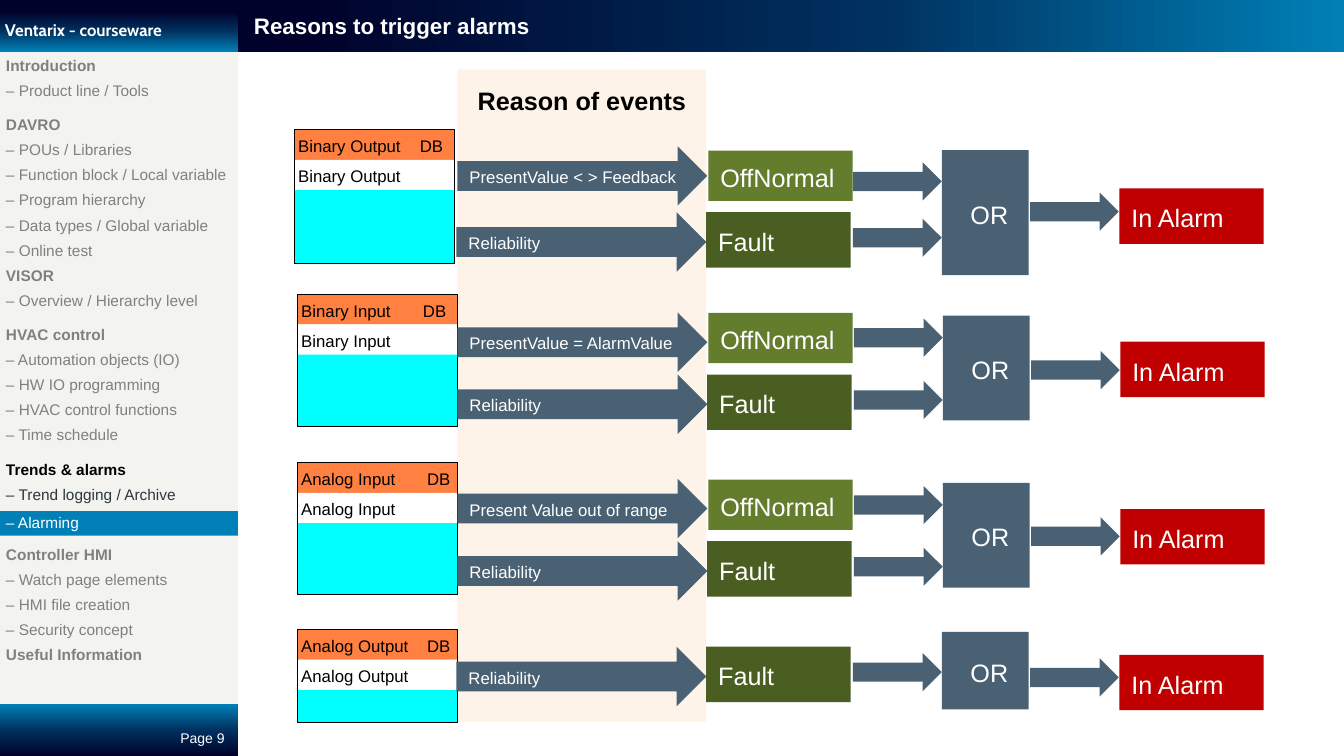
from dataclasses import dataclass
from typing import Optional

from pptx import Presentation
from pptx.dml.color import RGBColor
from pptx.enum.shapes import MSO_SHAPE
from pptx.enum.text import MSO_ANCHOR, PP_ALIGN
from pptx.oxml import parse_xml
from pptx.oxml.ns import nsdecls, qn
from pptx.util import Pt
from lxml.etree import SubElement

WHITE = RGBColor(0xFF, 0xFF, 0xFF)
BLACK = RGBColor(0, 0, 0)
GRAY = RGBColor(0x80, 0x80, 0x80)
DARK_GRAY = RGBColor(0x2D, 0x37, 0x3C)
SIDEBAR = RGBColor(0xF3, 0xF3, 0xF0)
HIGHLIGHT = RGBColor(0x00, 0x80, 0xB6)
NAVY = RGBColor(0x00, 0x02, 0x2B)
MIDNIGHT = RGBColor(0x00, 0x31, 0x5F)
PEACH = RGBColor(0xFD, 0xE4, 0xCC)
ORANGE = RGBColor(0xFF, 0x80, 0x40)
CYAN = RGBColor(0x00, 0xFF, 0xFF)
SLATE = RGBColor(0x49, 0x61, 0x73)
GREEN = RGBColor(0x64, 0x7D, 0x2D)
DARK_GREEN = RGBColor(0x4B, 0x5E, 0x22)
RED = RGBColor(0xC0, 0x00, 0x00)

NO_TABLE_STYLE = "{2D5ABB26-0587-4C30-8999-92F81FD0307C}"
SIDEBAR_WIDTH = 170
HEADER_HEIGHT = 36.9
CELL_HEIGHT = 21.6
BLOCK_INSETS = (8.6, 4.3, 2.9, 4.3)
DATABASE_INSETS = (2.9, 4.3, 2.9, 4.3)
TOPIC_INSETS = (2.9, 2.2, 0, 2.2)
SELECTED_INSETS = (2.9, 4.4, 0, 0)


@dataclass
class AlarmChain:
    """One object type with its events; all positions in points."""
    name: str
    tab: float
    left: float
    top: float
    height: float
    shift: float
    fault_top: float
    or_top: float
    or_height: float
    alarm_top: float
    out_arrow_top: float
    condition: Optional[str] = None
    condition_top: float = 0
    off_arrow_top: float = 0


CHAINS = [
    AlarmChain("Binary Output", 87, 210.2, 92.6, 95.8, -0.7, 151.6, 107.3, 89.3, 134.6, 137.5,
               "PresentValue < > Feedback", 104.4, 115.9),
    AlarmChain("Binary Input", 87, 212.4, 210.2, 94.3, 0, 267.5, 225.4, 74.9, 244.1, 250.6,
               "PresentValue = AlarmValue", 223.2, 227.5),
    AlarmChain("Analog Input", 90, 212.4, 330.5, 94.3, 0, 386.6, 344.9, 74.9, 363.6, 369.4,
               "Present Value out of range", 342, 347),
    AlarmChain("Analog Output", 90, 212.4, 449.7, 66.2, -0.7, 461.9, 451.4, 55.4, 467.7, 470.2),
]

CHAPTERS = {
    "Introduction": ["Product line / Tools"],
    "DAVRO": ["POUs / Libraries", "Function block / Local variable", "Program hierarchy",
              "Data types / Global variable", "Online test"],
    "VISOR": ["Overview / Hierarchy level"],
    "HVAC control": ["Automation objects (IO)", "HW IO programming", "HVAC control functions",
                     "Time schedule"],
    "Trends & alarms": ["Trend logging / Archive", "Alarming"],
    "Controller HMI": ["Watch page elements", "HMI file creation", "Security concept"],
    "Useful Information": [],
}
SPACED_CHAPTERS = {"DAVRO", "HVAC control", "Trends & alarms", "Controller HMI"}
CURRENT_CHAPTER, CURRENT_TOPIC = "Trends & alarms", "Alarming"


def set_font(paragraph, size: float, color: RGBColor, bold: bool = False, name: str = "Arial") -> None:
    font = paragraph.font
    font.name, font.size, font.bold = name, Pt(size), bold
    font.color.rgb = color


def set_insets(frame, insets: tuple) -> None:
    frame.margin_left, frame.margin_top, frame.margin_right, frame.margin_bottom = map(Pt, insets)


def add_block(slide, left: float, top: float, width: float, height: float,
              fill: Optional[RGBColor] = None, preset=MSO_SHAPE.RECTANGLE):
    """Add a plain preset shape without line or shadow."""
    shape = slide.shapes.add_shape(preset, Pt(left), Pt(top), Pt(width), Pt(height))
    shape.shadow.inherit = False
    shape.line.fill.background()
    if fill is None:
        shape.fill.background()
    else:
        shape.fill.solid()
        shape.fill.fore_color.rgb = fill
    return shape


def write(shape, text: str, size: float, color: RGBColor = WHITE, bold: bool = False,
          align=PP_ALIGN.LEFT, insets: tuple = BLOCK_INSETS, tab: Optional[float] = None) -> None:
    frame = shape.text_frame
    frame.word_wrap = True
    frame.vertical_anchor = MSO_ANCHOR.MIDDLE
    set_insets(frame, insets)
    paragraph = frame.paragraphs[0]
    paragraph.text = text
    paragraph.alignment = align
    paragraph.line_spacing = 1.1
    if tab:
        tabs = SubElement(paragraph._p.get_or_add_pPr(), qn("a:tabLst"))
        SubElement(tabs, qn("a:tab"), pos=str(Pt(tab)), algn="l")
    set_font(paragraph, size, color, bold)


def add_arrow(slide, left: float, top: float, width: float = 63.4, height: float = 27.4):
    return add_block(slide, left, top, width, height, SLATE, MSO_SHAPE.RIGHT_ARROW)


def add_gradient_bar(slide, left: float, top: float, width: float, height: float,
                     start: int, middle: int, angle: int):
    """Add a bar running from navy to blue; start and middle are percentages."""
    bar = add_block(slide, left, top, width, height, NAVY)
    stops = "".join(f'<a:gs pos="{position * 1000}"><a:srgbClr val="{color}"/></a:gs>'
                    for position, color in ((start, NAVY), (middle, MIDNIGHT), (100, HIGHLIGHT)))
    properties = bar._element.spPr
    properties.replace(properties.find(qn("a:solidFill")), parse_xml(
        f'<a:gradFill {nsdecls("a")} rotWithShape="1"><a:gsLst>{stops}</a:gsLst>'
        f'<a:lin ang="{angle * 60000}" scaled="0"/></a:gradFill>'))
    return bar


def add_label(slide, left: float, top: float, width: float, height: float, text: str,
              insets: tuple, align=PP_ALIGN.LEFT):
    """Add a text box and return its paragraph."""
    frame = slide.shapes.add_textbox(Pt(left), Pt(top), Pt(width), Pt(height)).text_frame
    frame.word_wrap = True
    set_insets(frame, insets)
    paragraph = frame.paragraphs[0]
    paragraph.text = text
    paragraph.alignment = align
    return paragraph


def add_contents(slide) -> None:
    entries = [(chapter, topic) for chapter, topics in CHAPTERS.items() for topic in [None, *topics]]
    table = slide.shapes.add_table(len(entries), 1, Pt(1.4), Pt(37.4), Pt(167), Pt(443)).table
    table.first_row = table.horz_banding = False
    table._tbl.tblPr.find(qn("a:tableStyleId")).text = NO_TABLE_STYLE
    for index, (chapter, topic) in enumerate(entries):
        spaced = topic is None and chapter in SPACED_CHAPTERS
        selected = topic == CURRENT_TOPIC
        table.rows[index].height = Pt(24.8 if spaced else 17.9)
        cell = table.cell(index, 0)
        cell.fill.background()
        cell.vertical_anchor = MSO_ANCHOR.BOTTOM
        set_insets(cell, SELECTED_INSETS if selected else TOPIC_INSETS)
        paragraph = cell.text_frame.paragraphs[0]
        paragraph.text = f"– {topic}" if topic else chapter
        if spaced:
            paragraph.line_spacing = Pt(19)
        color = GRAY
        if chapter == CURRENT_CHAPTER:
            color = WHITE if selected else DARK_GRAY if topic else BLACK
        set_font(paragraph, 11, color, bold=topic is None)


def add_sidebar(slide) -> None:
    add_block(slide, 0, HEADER_HEIGHT, SIDEBAR_WIDTH, 540 - HEADER_HEIGHT, SIDEBAR)
    add_gradient_bar(slide, 0, 503.1, SIDEBAR_WIDTH, 36.9, 0, 50, 270)
    add_gradient_bar(slide, 0, 0, SIDEBAR_WIDTH, HEADER_HEIGHT, 23, 60, 90)
    course = add_label(slide, 0.7, 3.6, 169, 32.4, "Ventarix - courseware", (2.9, 5.8, 8.6, 5.8))
    course.line_spacing = Pt(19)
    set_font(course, 12, WHITE, True, "Cabin")
    page = add_label(slide, 108, 517.7, 73.4, 21.6, "Page 9", (7.2, 3.6, 7.2, 3.6), PP_ALIGN.CENTER)
    set_font(page, 10, WHITE)
    add_block(slide, 0, 365.2, SIDEBAR_WIDTH, 17.4, HIGHLIGHT)
    add_contents(slide)


def add_database(slide, chain: AlarmChain) -> None:
    width = 114.8
    header = add_block(slide, chain.left, chain.top, width, CELL_HEIGHT, ORANGE)
    write(header, f"{chain.name}\tDB", 12, BLACK, insets=DATABASE_INSETS, tab=chain.tab)
    name = add_block(slide, chain.left, chain.top + CELL_HEIGHT, width, CELL_HEIGHT, WHITE)
    write(name, chain.name, 12, BLACK, insets=DATABASE_INSETS)
    add_block(slide, chain.left, chain.top + 2 * CELL_HEIGHT, width, chain.height - 2 * CELL_HEIGHT, CYAN)
    frame = add_block(slide, chain.left, chain.top, width, chain.height)
    frame.line.color.rgb = BLACK
    frame.line.width = Pt(0.75)


def add_chain(slide, chain: AlarmChain) -> None:
    add_database(slide, chain)
    shift = chain.shift
    write(add_arrow(slide, 326.9 + shift, chain.fault_top, 178.6, 42.5), "Reliability", 12)
    write(add_block(slide, 505.4 + shift, chain.fault_top, 103.2, 39.6, DARK_GREEN), "Fault", 18)
    add_arrow(slide, 610.3 + shift, chain.fault_top + 4.5)
    if chain.condition:
        write(add_arrow(slide, 326.9, chain.condition_top, 178.6, 42.5), chain.condition, 12)
        write(add_block(slide, 506.2, chain.fault_top - 44, 103.2, 36, GREEN), "OffNormal", 18)
        add_arrow(slide, 610.3 + shift, chain.off_arrow_top)
    or_gate = add_block(slide, 673.9 + shift, chain.or_top, 62, chain.or_height, SLATE)
    write(or_gate, "OR", 18, align=PP_ALIGN.CENTER)
    add_arrow(slide, 736.8 + shift, chain.out_arrow_top)
    write(add_block(slide, 800.6 + shift, chain.alarm_top, 103.2, 39.6, RED), "In Alarm", 18)


def main() -> None:
    presentation = Presentation()
    presentation.slide_width, presentation.slide_height = Pt(960.5), Pt(540)
    slide = presentation.slides.add_slide(presentation.slide_layouts[6])
    add_sidebar(slide)
    panel = add_block(slide, 326.9, 49.7, 177.8, 465.8, PEACH)
    panel_color = panel._element.spPr.find(qn("a:solidFill")).find(qn("a:srgbClr"))
    SubElement(panel_color, qn("a:alpha"), val="43000")
    title = add_gradient_bar(slide, SIDEBAR_WIDTH, 0, 790.5, HEADER_HEIGHT, 6, 58, 0)
    write(title, "Reasons to trigger alarms", 16, bold=True, insets=(11.5,) * 4)
    title.text_frame.paragraphs[0].line_spacing = 1.0
    heading = add_label(slide, 337, 58, 157.7, 27.4, "Reason of events", (2.9,) * 4, PP_ALIGN.CENTER)
    set_font(heading, 18, BLACK, True)
    for chain in CHAINS:
        add_chain(slide, chain)
    presentation.save("out.pptx")


if __name__ == "__main__":
    main()
